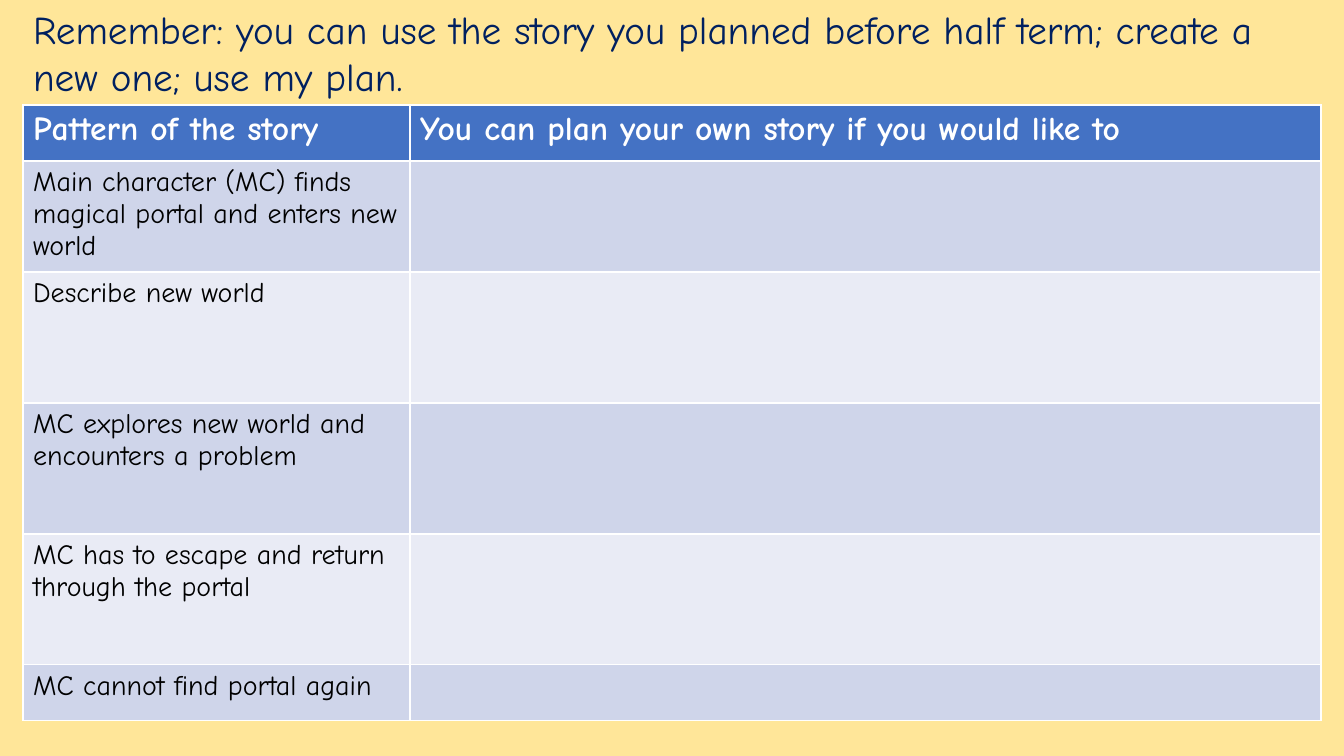
import pptx
import pptx.dml.color
import pptx.enum.text
import pptx.util

RGB = pptx.dml.color.RGBColor
CREAM = RGB(0xFF, 0xE6, 0x99)
NAVY = RGB(0x00, 0x20, 0x60)
BLUE = RGB(0x44, 0x72, 0xC4)
WHITE = RGB(0xFF, 0xFF, 0xFF)
BLACK = RGB(0x00, 0x00, 0x00)
BANDS = [RGB(0xCF, 0xD5, 0xEA), RGB(0xE9, 0xEB, 0xF5)]
FONT = "Comic Neue"
SCALE = pptx.util.Inches(1) / 100.8

REMIND = ("Remember: you can use the story you planned before half term; "
          "create a new one; use my plan.")
HEADS = ["Pattern of the story",
         "You can plan your own story if you would like to"]
STEPS = [("Main character (MC) finds magical portal and enters new world", 111),
         ("Describe new world", 131),
         ("MC explores new world and encounters a problem", 131),
         ("MC has to escape and return through the portal", 131),
         ("MC cannot find portal again", 56)]


def px(count):
    """Turn pixels into EMU."""
    return pptx.util.Emu(round(count * SCALE))


def style(para, size, color, bold=False):
    """Set the font of one paragraph."""
    font = para.font
    font.name, font.size, font.bold = FONT, pptx.util.Pt(size), bold
    font.color.rgb = color


def title(slide, left, top, width, height):
    """Place the reminder in the title placeholder."""
    shape = slide.shapes.title
    shape.left, shape.top = px(left), px(top)
    shape.width, shape.height = px(width), px(height)
    frame = shape.text_frame
    frame.text = REMIND
    frame.word_wrap = True
    frame.auto_size = pptx.enum.text.MSO_AUTO_SIZE.NONE
    frame.vertical_anchor = pptx.enum.text.MSO_ANCHOR.TOP
    para = frame.paragraphs[0]
    para.alignment = pptx.enum.text.PP_ALIGN.LEFT
    style(para, 28, NAVY)


def plan(slide, left, top, width, first, head):
    """Draw the story plan, with a head row and one row per step."""
    rows = [(HEADS, head)] + [((step, ""), high) for step, high in STEPS]
    total = sum(high for _, high in rows)
    table = slide.shapes.add_table(len(rows), len(HEADS), px(left), px(top),
                                   px(width), px(total)).table
    for col, wide in zip(table.columns, (first, width - first)):
        col.width = px(wide)
    for r, (texts, high) in enumerate(rows):
        table.rows[r].height = px(high)
        for c, text in enumerate(texts):
            cell = table.cell(r, c)
            cell.text = text
            cell.fill.solid()
            cell.fill.fore_color.rgb = BANDS[(r - 1) % 2] if r else BLUE
            para = cell.text_frame.paragraphs[0]
            if r:
                style(para, 20, BLACK)
            else:
                style(para, 24, WHITE, True)


def main():
    """Build the slide and save it."""
    deck = pptx.Presentation()
    deck.slide_width, deck.slide_height = px(1344), px(756)
    slide = deck.slides.add_slide(deck.slide_layouts.get_by_name("Title Only"))
    back = slide.background.fill
    back.solid()
    back.fore_color.rgb = CREAM
    title(slide, 23, 0, 1298, 105)
    plan(slide, 23, 105, 1298, 387, 56)
    deck.save("out.pptx")


if __name__ == "__main__":
    main()
